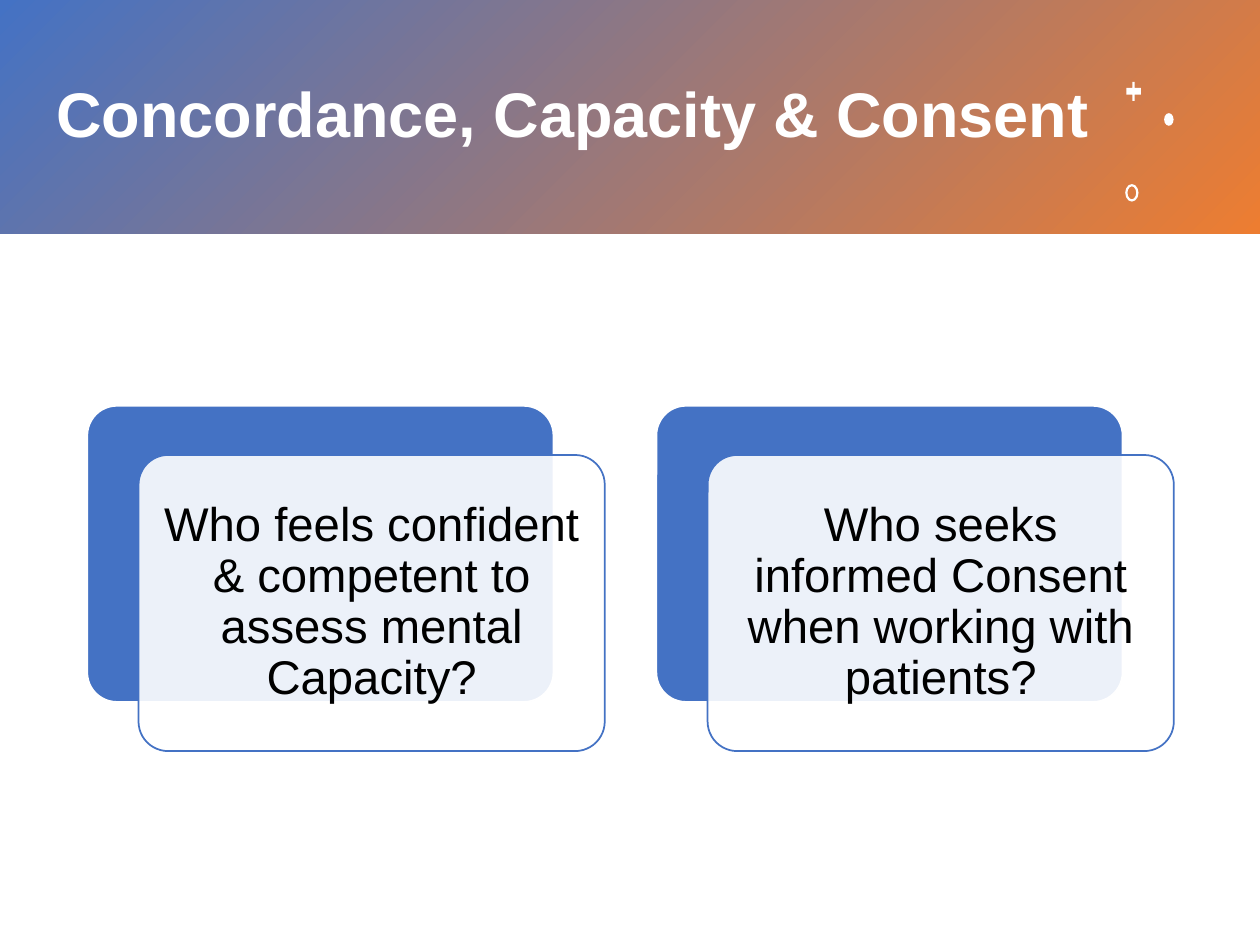
from lxml.etree import SubElement
from pptx import Presentation
from pptx.dml.color import RGBColor
from pptx.enum.shapes import MSO_SHAPE
from pptx.enum.text import MSO_ANCHOR, PP_ALIGN
from pptx.oxml.ns import qn
from pptx.util import Pt

TITLE = "Concordance, Capacity & Consent"
QUESTIONS = [
    "Who feels confident & competent to assess mental Capacity?",
    "Who seeks informed Consent when working with patients?",
]
ORNAMENTS = [
    (MSO_SHAPE.CROSS, (643.7, 46.8, 8.2, 10.8), 0.42),
    (MSO_SHAPE.OVAL, (665.2, 64.7, 5.4, 7.2), None),
    (MSO_SHAPE.DONUT, (643, 105.2, 7.6, 10), 0.17),
]
THEME = {
    "font": "Arial",
    "title_size": 36,
    "question_size": 27,
    "blue": RGBColor(0x44, 0x72, 0xC4),
    "orange": RGBColor(0xED, 0x7D, 0x31),
    "white": RGBColor(0xFF, 0xFF, 0xFF),
    "black": RGBColor(0, 0, 0),
}
SLIDE_W, SLIDE_H = 720, 540
BANNER_H = 133.2
CARD_W, CARD_H = 266.4, 169.2
CARD_LEFT, CARD_TOP = 49.9, 231.9
CARD_STEP = 325.2
FRONT_DX, FRONT_DY = 29.3, 28.1
CARD_ROUNDING = 0.1


def add_panel(slide, kind, box, fill=None, line=None, adjustment=None):
    panel = slide.shapes.add_shape(kind, *map(Pt, box))
    panel.shadow.inherit = False
    if fill is not None:
        panel.fill.solid()
        panel.fill.fore_color.rgb = fill
    if line is None:
        panel.line.fill.background()
    else:
        panel.line.color.rgb = line
        panel.line.width = Pt(1)
    if adjustment is not None:
        panel.adjustments[0] = adjustment
    return panel


def write_text(holder, text, size, color, bold=False, align=PP_ALIGN.LEFT, insets=(7.2, 3.6)):
    frame = holder.text_frame
    frame.word_wrap = True
    frame.vertical_anchor = MSO_ANCHOR.MIDDLE
    frame.margin_left = frame.margin_right = Pt(insets[0])
    frame.margin_top = frame.margin_bottom = Pt(insets[1])
    paragraph = frame.paragraphs[0]
    paragraph.alignment = align
    paragraph.line_spacing = 0.9
    run = paragraph.add_run()
    run.text = text
    run.font.name = THEME["font"]
    run.font.size = Pt(size)
    run.font.bold = bold
    run.font.color.rgb = color


def add_banner(slide):
    banner = add_panel(slide, MSO_SHAPE.RECTANGLE, (0, 0, SLIDE_W, BANNER_H))
    banner.fill.gradient()
    banner.fill.gradient_angle = 315
    for stop, name in zip(banner.fill.gradient_stops, ("blue", "orange")):
        stop.color.rgb = THEME[name]
    title = slide.shapes.add_textbox(Pt(25.2), Pt(23.8), Pt(686.2), Pt(85.7))
    write_text(title, TITLE, THEME["title_size"], THEME["white"], bold=True)
    for kind, box, adjustment in ORNAMENTS:
        add_panel(slide, kind, box, THEME["white"], adjustment=adjustment)


def add_card(slide, left, question):
    add_panel(slide, MSO_SHAPE.ROUNDED_RECTANGLE, (left, CARD_TOP, CARD_W, CARD_H),
              THEME["blue"], THEME["white"], CARD_ROUNDING)
    front = add_panel(slide, MSO_SHAPE.ROUNDED_RECTANGLE,
                      (left + FRONT_DX, CARD_TOP + FRONT_DY, CARD_W, CARD_H),
                      THEME["white"], THEME["blue"], CARD_ROUNDING)
    fill_color = front.fill._xPr.find(qn("a:solidFill"))[0]
    SubElement(fill_color, qn("a:alpha"), val="90000")
    write_text(front, question, THEME["question_size"], THEME["black"],
               align=PP_ALIGN.CENTER, insets=(8, 8))


def main():
    deck = Presentation()
    deck.slide_width, deck.slide_height = Pt(SLIDE_W), Pt(SLIDE_H)
    slide = deck.slides.add_slide(deck.slide_layouts[6])
    add_banner(slide)
    for column, question in enumerate(QUESTIONS):
        add_card(slide, CARD_LEFT + column * CARD_STEP, question)
    deck.save("out.pptx")


if __name__ == "__main__":
    main()
